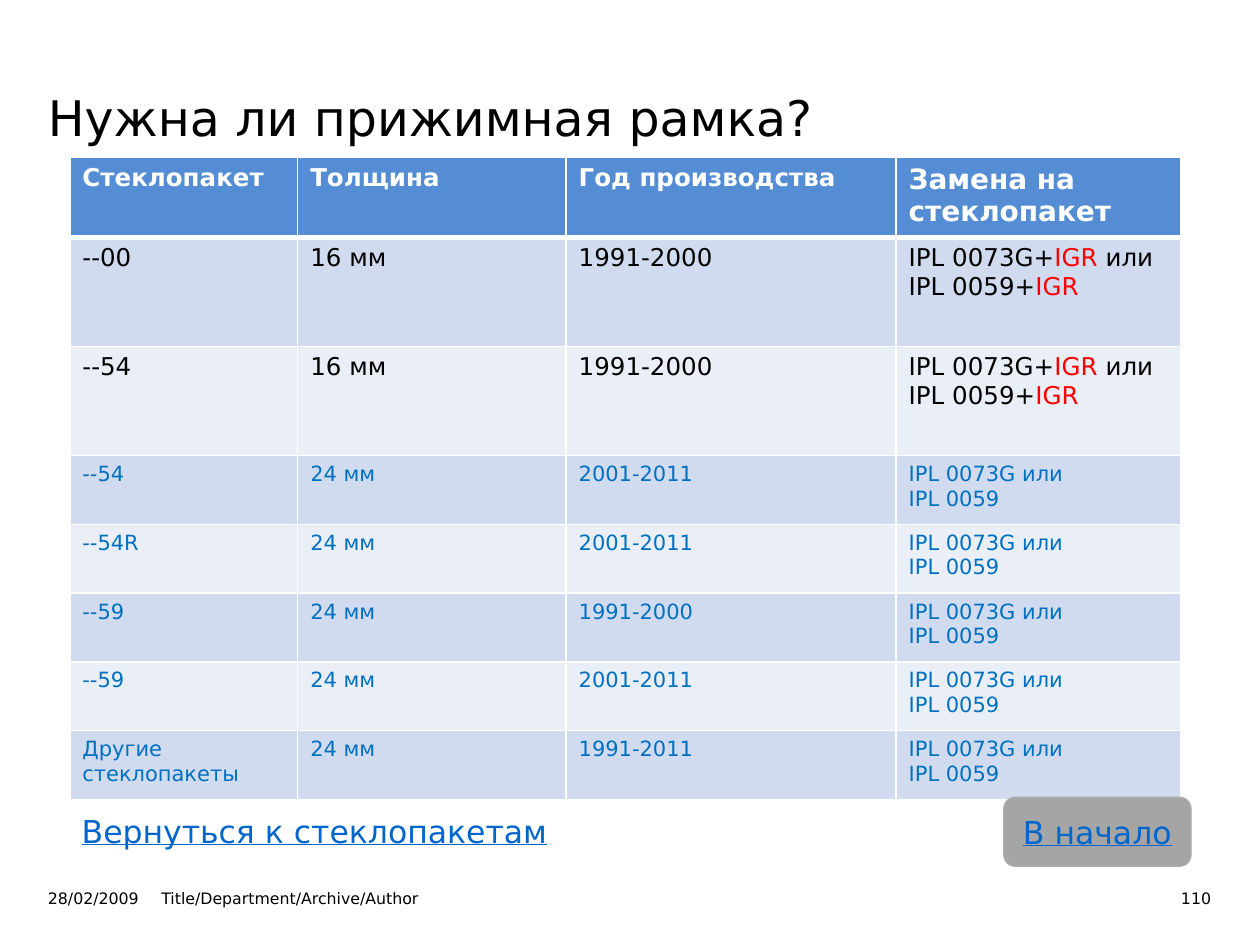
from lxml.etree import SubElement, Element
from pptx import Presentation
from pptx.dml.color import RGBColor as Rgb
from pptx.enum.shapes import MSO_SHAPE as Shape
from pptx.enum.text import MSO_ANCHOR as Anchor, PP_ALIGN as Align
from pptx.oxml.ns import qn
from pptx.util import Pt

FONT = "DejaVu Sans"
COLORS = {
    "black": "000000", "white": "FFFFFF", "red": "FF0000", "blue": "0070C0",
    "link": "0066CC", "header": "548DD4", "band_dark": "D1DBEF",
    "band_light": "E9EEF7", "button": "A5A5A5", "button_line": "ACACAC",
}


def color(name):
    return Rgb.from_string(COLORS[name])


def write(frame, lines, size=14, ink="black", bold=False, underline=False,
          align=Align.LEFT, spacing=None):
    """Fill a frame; a line is a string or a list of (text, color name)."""
    frame.word_wrap = True
    for number, line in enumerate(lines):
        para = frame.add_paragraph() if number else frame.paragraphs[0]
        para.alignment = align
        para.line_spacing = spacing
        for text, shade in [(line, ink)] if isinstance(line, str) else line:
            span = para.add_run()
            span.text = text
            font = span.font
            font.name, font.size = FONT, Pt(size)
            font.bold, font.underline = bold, underline
            font.color.rgb = color(shade)


class Page:
    def __init__(self, deck):
        self.slide = deck.slides.add_slide(deck.slide_layouts[6])

    def frame(self, item, insets, anchor):
        frame = item.text_frame
        (frame.margin_left, frame.margin_top,
         frame.margin_right, frame.margin_bottom) = map(Pt, insets)
        frame.vertical_anchor = anchor
        return frame

    def text(self, place, line, insets=(0, 0, 0, 0), anchor=Anchor.TOP, **style):
        box = self.slide.shapes.add_textbox(*map(Pt, place))
        write(self.frame(box, insets, anchor), [line], **style)

    def shape(self, kind, place, line, fill, outline=None,
              insets=(0, 0, 0, 0), anchor=Anchor.MIDDLE, **style):
        box = self.slide.shapes.add_shape(kind, *map(Pt, place))
        box.shadow.inherit = False
        box.fill.solid()
        box.fill.fore_color.rgb = color(fill)
        if outline:
            box.line.color.rgb = color(outline)
            box.line.width = Pt(0.75)
        else:
            box.line.fill.background()
        write(self.frame(box, insets, anchor), [line], **style)

    def borders(self, cell, top, bottom):
        widths = {"a:lnL": 1, "a:lnR": 1, "a:lnT": top, "a:lnB": bottom}
        properties = cell._tc.get_or_add_tcPr()
        for position, (side, width) in enumerate(widths.items()):
            edge = Element(qn(side), w=str(Pt(width)))
            fill = SubElement(edge, qn("a:solidFill"))
            SubElement(fill, qn("a:srgbClr"), val=COLORS["white"])
            properties.insert(position, edge)

    def table(self, left, top, widths, heights, rows):
        table = self.slide.shapes.add_table(
            len(rows), len(widths), Pt(left), Pt(top),
            Pt(sum(widths)), Pt(sum(heights))).table
        table.first_row = table.horz_banding = False
        for column, width in zip(table.columns, widths):
            column.width = Pt(width)
        for number, (cells, style) in enumerate(rows):
            table.rows[number].height = Pt(heights[number])
            band = "band_dark" if number % 2 else "band_light"
            for index, content in enumerate(cells):
                cell = table.cell(number, index)
                cell.fill.solid()
                cell.fill.fore_color.rgb = color(band if number else "header")
                lines = [content] if isinstance(content, str) else content
                size = 16 if number == 0 and index == 3 else style["size"]
                write(cell.text_frame, lines, **{**style, "size": size})
                self.borders(cell, 3 if number == 1 else 1, 1 if number else 3)


def main():
    deck = Presentation()
    deck.slide_width, deck.slide_height = Pt(720), Pt(540)
    page = Page(deck)

    # Title
    page.text((27.4, 13, 553.7, 73.4), "Нужна ли прижимная рамка?", size=28,
              insets=(0, 0, 0, 2.9), anchor=Anchor.BOTTOM, spacing=1.05)

    # Footer
    page.text((27.4, 507.6, 62.6, 18), "28/02/2009", size=9)
    page.text((92.2, 507.6, 556.6, 18), "Title/Department/Archive/Author", size=9)
    page.text((668.2, 507.6, 23.8, 18), "110", size=9, align=Align.RIGHT)

    # Table of replacements
    header = {"size": 14, "ink": "white", "bold": True}
    framed = {"size": 14, "ink": "black"}
    plain = {"size": 12, "ink": "blue"}
    with_frame = [
        [("IPL 0073G+", "black"), ("IGR", "red"), (" или", "black")],
        [("IPL 0059+", "black"), ("IGR", "red")],
    ]
    without_frame = ["IPL 0073G или", "IPL 0059"]
    old_units = ["--00", "--54"]
    new_units = [("--54", "2001-2011"), ("--54R", "2001-2011"),
                 ("--59", "1991-2000"), ("--59", "2001-2011"),
                 ("Другие стеклопакеты", "1991-2011")]
    rows = [(["Стеклопакет", "Толщина", "Год производства",
              "Замена на стеклопакет"], header)]
    rows += [([unit, "16 мм", "1991-2000", with_frame], framed)
             for unit in old_units]
    rows += [([unit, "24 мм", years, without_frame], plain)
             for unit, years in new_units]
    page.table(39.9, 90, [130.2, 153.4, 188.6, 162.8],
               [44] + [62.4] * 2 + [39.3] * 5, rows)

    # Navigation
    page.shape(Shape.FLOWCHART_ALTERNATE_PROCESS, (573.6, 455.6, 107, 39.4),
               "В начало", "button", outline="button_line", size=18,
               ink="link", underline=True, align=Align.CENTER)
    page.shape(Shape.RECTANGLE, (39.6, 460.2, 315.4, 29),
               "Вернуться к стеклопакетам", "white",
               insets=(7.2, 3.6, 7.2, 3.6), anchor=Anchor.TOP, size=18,
               ink="link", underline=True)

    deck.save("out.pptx")


if __name__ == "__main__":
    main()
